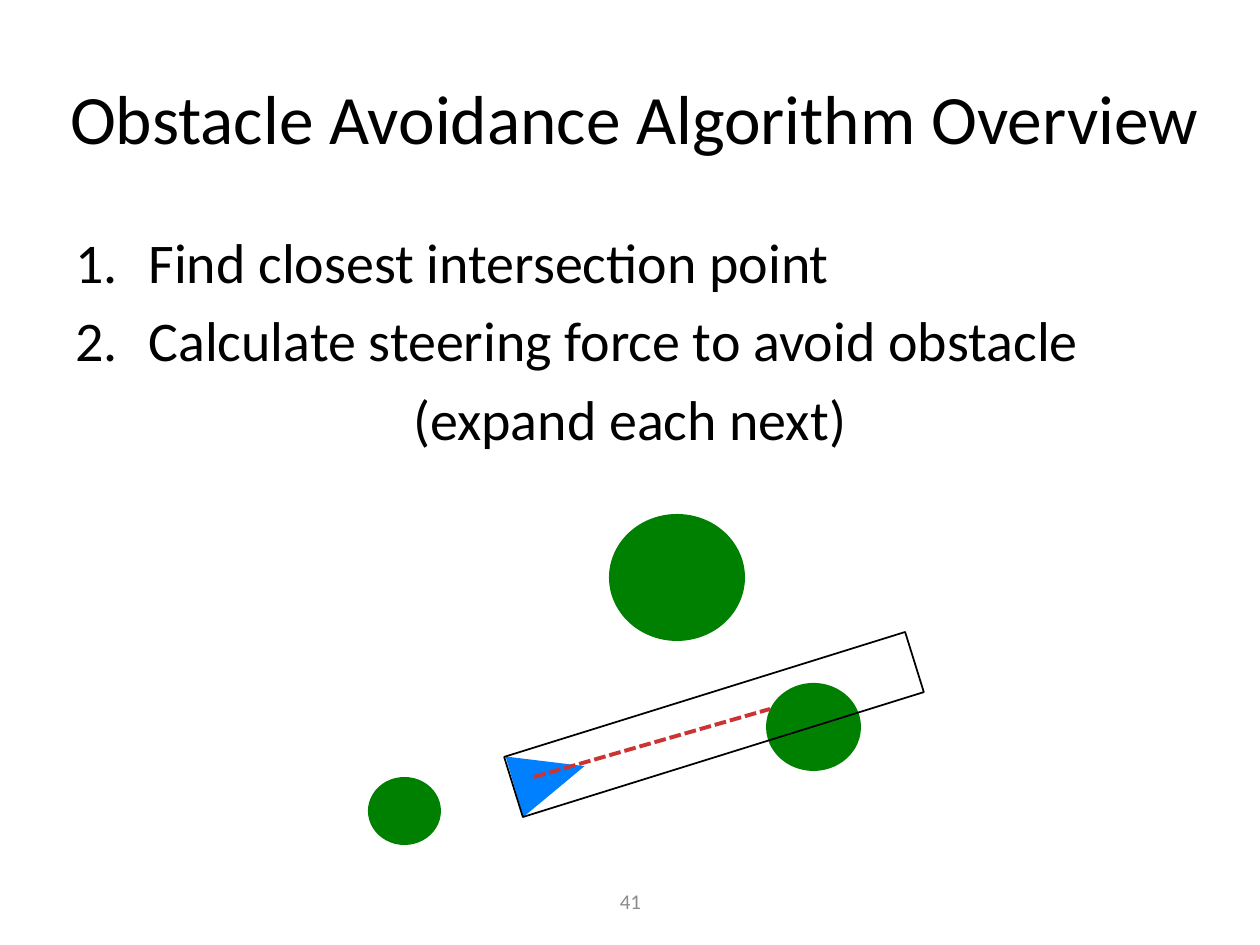
import pptx
import pptx.dml.color
import pptx.enum.dml
import pptx.enum.shapes
import pptx.enum.text
import pptx.oxml.ns
import pptx.util
from lxml import etree

EMU_PER_PX = 914400 / 126
FONT = "Calibri"
BLACK = pptx.dml.color.RGBColor(0x00, 0x00, 0x00)
GRAY = pptx.dml.color.RGBColor(0x8C, 0x8C, 0x8C)
GREEN = pptx.dml.color.RGBColor(0x00, 0x80, 0x00)
BLUE = pptx.dml.color.RGBColor(0x00, 0x80, 0xFF)
RED = pptx.dml.color.RGBColor(0xCC, 0x33, 0x33)

SHAPE = pptx.enum.shapes.MSO_SHAPE
ALIGN = pptx.enum.text.PP_ALIGN
ANCHOR = pptx.enum.text.MSO_ANCHOR


def px(length):
    return pptx.util.Emu(round(length * EMU_PER_PX))


def add_frame(slide, box, anchor):
    frame = slide.shapes.add_textbox(*map(px, box)).text_frame
    frame.word_wrap = True
    frame.vertical_anchor = anchor
    return frame


def add_run(paragraph, text, size, color, align):
    paragraph.alignment = align
    run = paragraph.add_run()
    run.text = text
    run.font.name = FONT
    run.font.size = pptx.util.Pt(size)
    run.font.color.rgb = color


def add_line_of_text(slide, box, text, size, color):
    frame = add_frame(slide, box, ANCHOR.MIDDLE)
    add_run(frame.paragraphs[0], text, size, color, ALIGN.CENTER)


def number_paragraph(paragraph, indent):
    properties = paragraph._p.get_or_add_pPr()
    properties.set("marL", str(px(indent)))
    properties.set("indent", str(-px(indent)))
    etree.SubElement(properties, pptx.oxml.ns.qn("a:buAutoNum"), type="arabicPeriod")


def add_steps(slide, box, steps, remark):
    """Numbered steps followed by a centred remark."""
    frame = add_frame(slide, box, ANCHOR.TOP)
    for position, text in enumerate(steps + [remark]):
        paragraph = frame.add_paragraph() if position else frame.paragraphs[0]
        if text in steps:
            number_paragraph(paragraph, 73)
        if position:
            paragraph.space_before = pptx.util.Pt(6.4)
        add_run(paragraph, text, 32, BLACK, ALIGN.CENTER if text == remark else ALIGN.LEFT)


def add_scene(slide, box):
    """Vehicle with its detection box, the obstacles and the ray to the nearest hit."""
    left, top = box[:2]

    def add_part(preset, x, y, width, height, fill=None, rotation=0):
        part = slide.shapes.add_shape(preset, px(left + x), px(top + y), px(width), px(height))
        part.shadow.inherit = False
        part.rotation = rotation
        if fill is None:
            part.fill.background()
            part.line.color.rgb = BLACK
            part.line.width = pptx.util.Pt(1)
        else:
            part.fill.solid()
            part.fill.fore_color.rgb = fill
            part.line.fill.background()

    for obstacle in ((0, 263, 73, 68), (398, 169, 95, 88), (241, 0, 136, 127)):
        add_part(SHAPE.OVAL, *obstacle, fill=GREEN)
    add_part(SHAPE.ISOSCELES_TRIANGLE, 150, 226, 63, 73, fill=BLUE, rotation=73.6)
    add_part(SHAPE.RECTANGLE, 136, 179, 420, 63, rotation=342.7)

    ray = slide.shapes.add_connector(
        pptx.enum.shapes.MSO_CONNECTOR.STRAIGHT,
        px(left + 166), px(top + 263), px(left + 402), px(top + 195))
    ray.line.color.rgb = RED
    ray.line.width = pptx.util.Pt(2.25)
    ray.line.dash_style = pptx.enum.dml.MSO_LINE.SQUARE_DOT
    etree.SubElement(ray._element.spPr, pptx.oxml.ns.qn("a:effectLst"))


def main():
    presentation = pptx.Presentation()
    presentation.slide_width, presentation.slide_height = px(1260), px(945)
    slide = presentation.slides.add_slide(presentation.slide_layouts[6])
    add_line_of_text(slide, (431, 876, 399, 50), "41", 12, GRAY)
    add_line_of_text(slide, (31, 38, 1207, 158), "Obstacle Avoidance Algorithm Overview", 39.6, BLACK)
    add_steps(slide, (63, 221, 1134, 624),
              ["Find closest intersection point", "Calculate steering force to avoid obstacle"],
              "(expand each next)")
    add_scene(slide, (368, 514, 556, 331))
    presentation.save("out.pptx")


if __name__ == "__main__":
    main()
